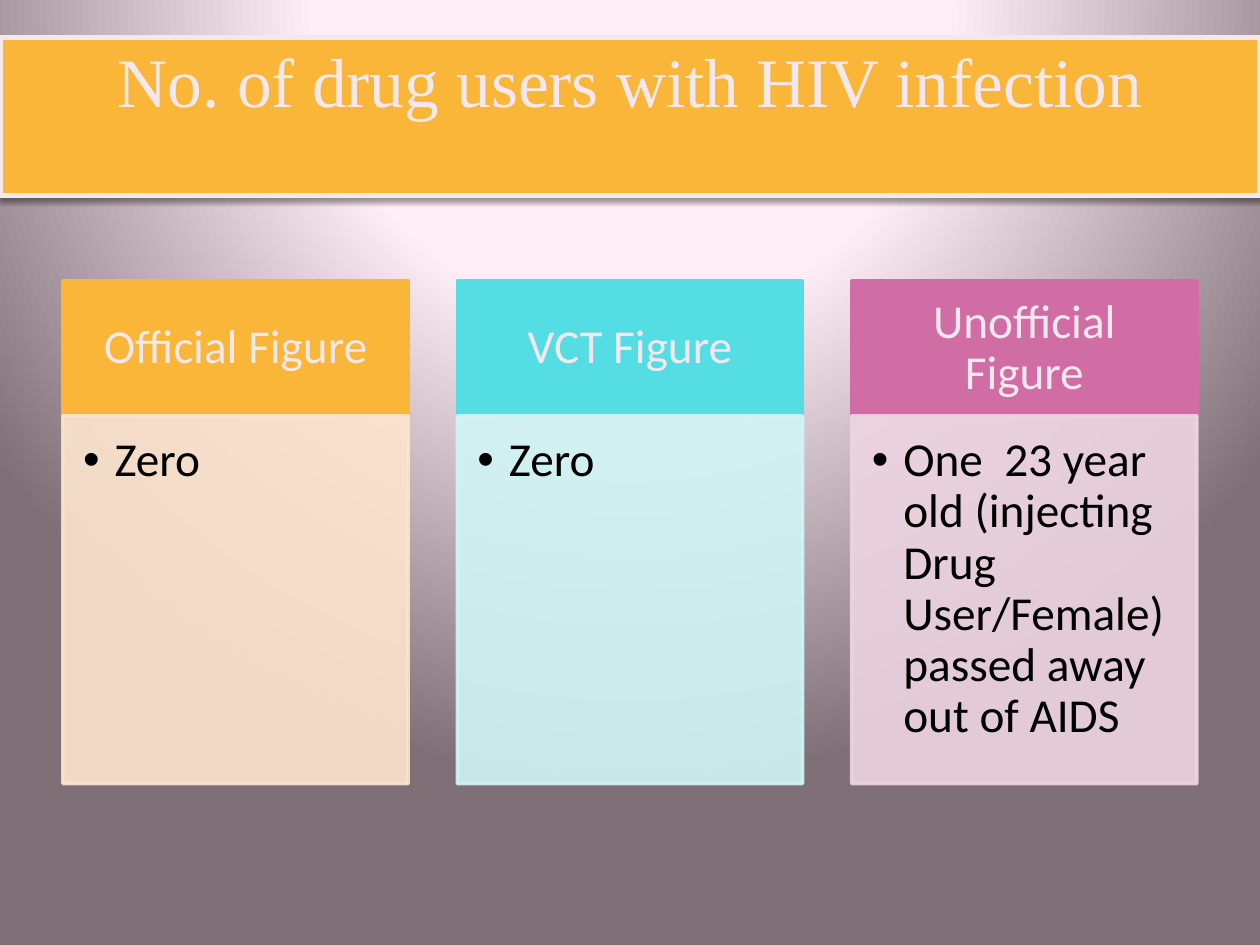
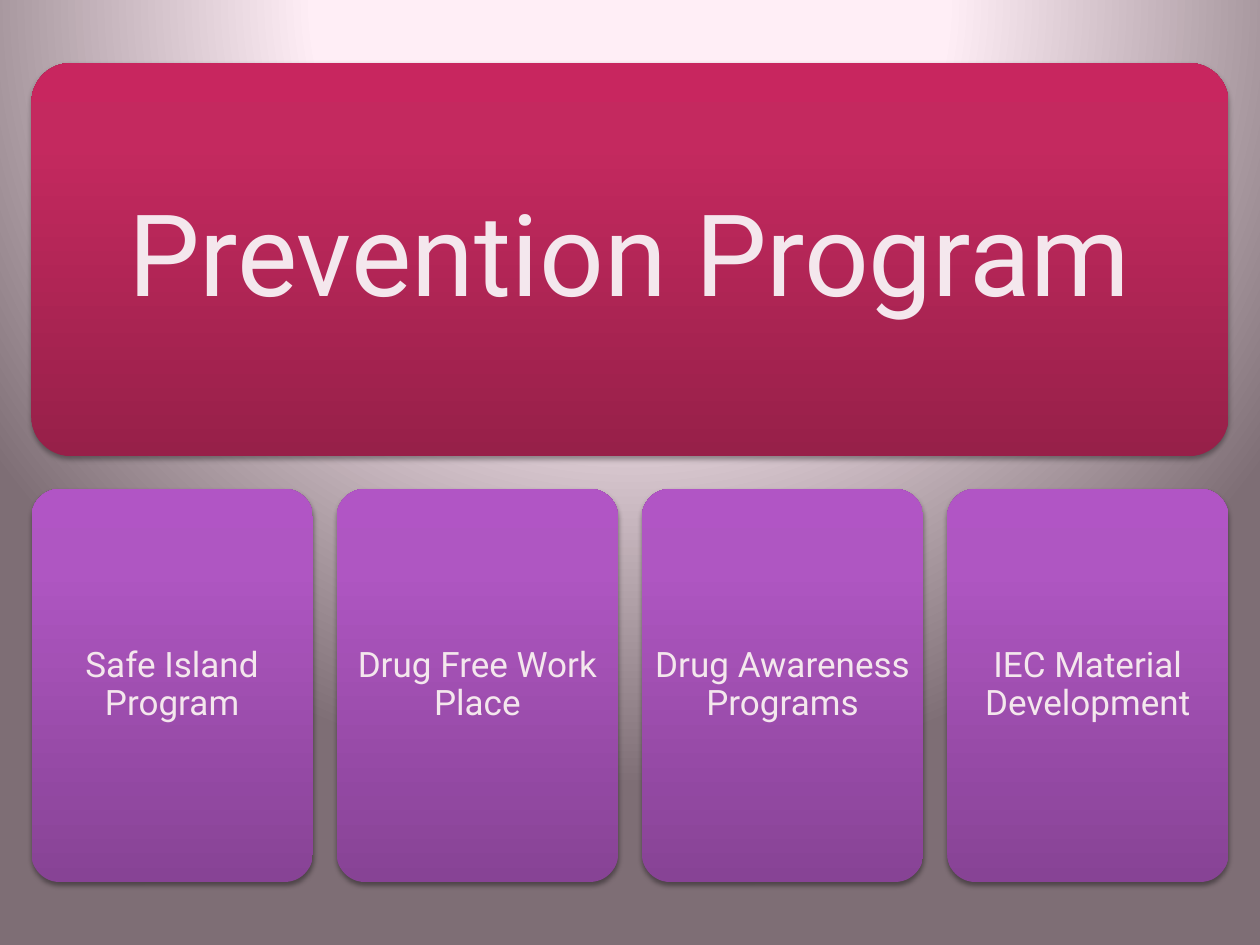
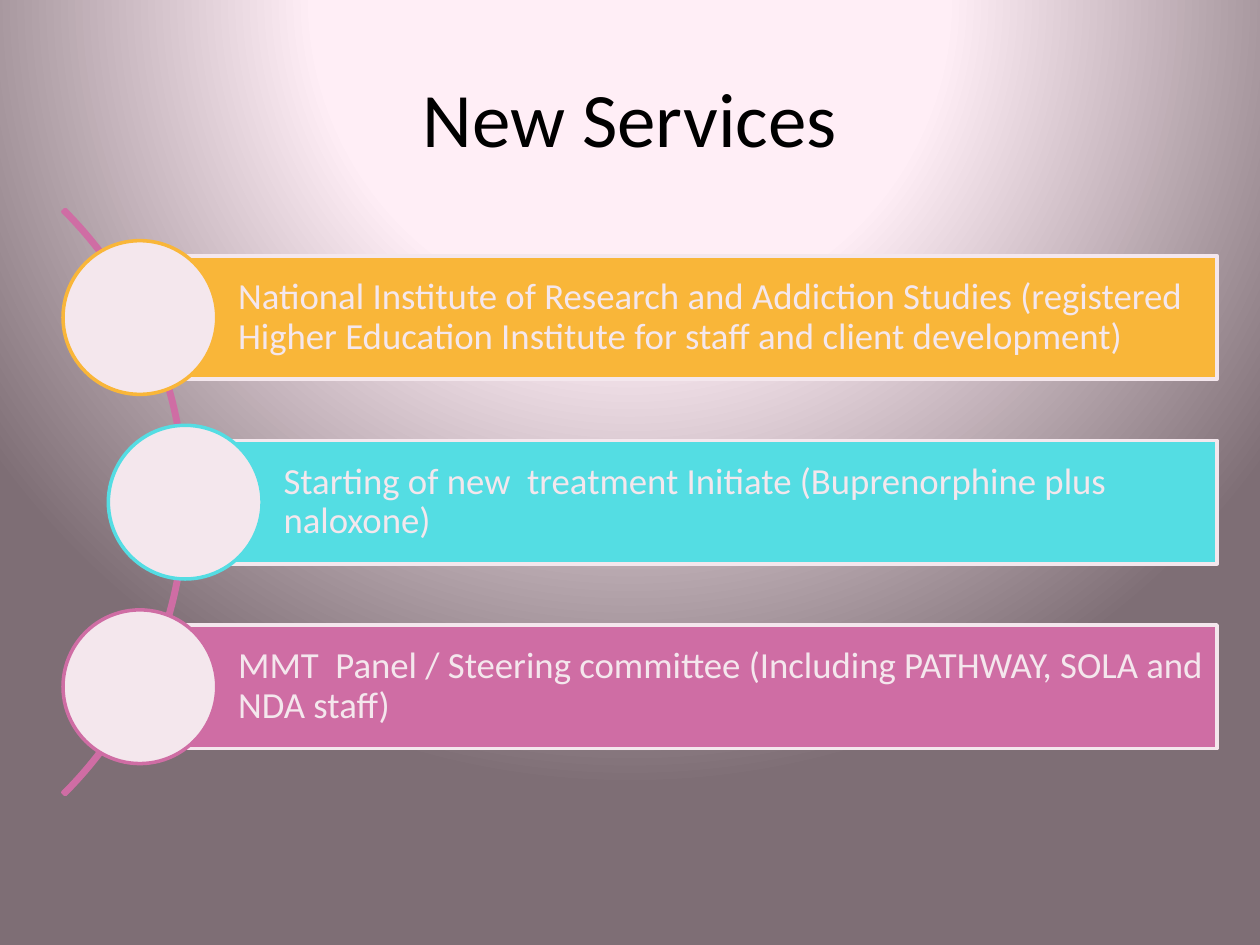
from lxml import etree
from pptx import Presentation
from pptx.dml.color import RGBColor
from pptx.enum.shapes import MSO_SHAPE
from pptx.enum.text import MSO_ANCHOR, PP_ALIGN
from pptx.oxml import parse_xml
from pptx.oxml.ns import nsdecls, qn
from pptx.util import Inches, Pt

RECT, ROUND = MSO_SHAPE.RECTANGLE, MSO_SHAPE.ROUNDED_RECTANGLE
OVAL, ARC = MSO_SHAPE.OVAL, MSO_SHAPE.BLOCK_ARC
TOP, MIDDLE = MSO_ANCHOR.TOP, MSO_ANCHOR.MIDDLE
LEFT, CENTER = PP_ALIGN.LEFT, PP_ALIGN.CENTER

# Palette
BLACK = RGBColor(0x00, 0x00, 0x00)
PALE = RGBColor(0xF4, 0xE7, 0xED)
AMBER = RGBColor(0xF9, 0xB6, 0x39)
CYAN = RGBColor(0x54, 0xDD, 0xE3)
PINK = RGBColor(0xCF, 0x6D, 0xA4)
LIGHT_AMBER = RGBColor(0xFD, 0xE5, 0xCE)
LIGHT_CYAN = RGBColor(0xD1, 0xF5, 0xF6)
LIGHT_PINK = RGBColor(0xED, 0xD5, 0xE1)

# Gradients: (position in percent, colour)
BACKDROP = [(0, RGBColor(0xFF, 0xF1, 0xF8)), (40, RGBColor(0xFF, 0xEE, 0xF6)),
            (100, RGBColor(0x7E, 0x6E, 0x75))]
CRIMSON = [(0, RGBColor(0x97, 0x20, 0x49)), (80, RGBColor(0xC4, 0x29, 0x5F)),
           (100, RGBColor(0xC8, 0x26, 0x5F))]
PURPLE = [(0, RGBColor(0x87, 0x43, 0x95)), (80, RGBColor(0xAF, 0x56, 0xC2)),
          (100, RGBColor(0xB1, 0x55, 0xC5))]
UPWARD = '<a:lin ang="16200000" scaled="0"/>'
FROM_ABOVE = ('<a:path path="circle"><a:fillToRect l="50000" t="-80000" '
              'r="50000" b="180000"/></a:path>')

# Slide size and text formats
WIDTH, HEIGHT = 10, 7.5
TITLE_TOP, TITLE_HEIGHT = 0.04 * HEIGHT, 1.25
BANNER_TITLE = {"name": "Times New Roman", "size": Pt(39.6), "color": PALE}
PLAIN_TITLE = {"name": "Calibri", "size": Pt(44), "color": BLACK}
CARD_HEAD = {"name": "Calibri", "size": Pt(27), "color": PALE}
CARD_BODY = {"name": "Calibri", "size": Pt(27), "color": BLACK}
PROGRAM_HEAD = {"name": "Roboto", "size": Pt(65), "color": PALE}
PROGRAM_ITEM = {"name": "Roboto", "size": Pt(20), "color": PALE}
SERVICE_TEXT = {"name": "Calibri", "size": Pt(21), "color": PALE}

CARDS = [
    ("Official Figure", "Zero", AMBER, LIGHT_AMBER),
    ("VCT Figure", "Zero", CYAN, LIGHT_CYAN),
    ("Unofficial Figure",
     "One  23 year old (injecting Drug User/Female) passed away out of AIDS",
     PINK, LIGHT_PINK),
]
PROGRAMS = ["Safe Island Program", "Drug Free Work Place",
            "Drug Awareness Programs", "IEC Material Development"]
SERVICES = [
    ("National Institute of Research and Addiction Studies (registered "
     "Higher Education Institute for staff and client development)", AMBER, 1.11),
    ("Starting of new  treatment Initiate (Buprenorphine plus naloxone)", CYAN, 1.47),
    ("MMT  Panel / Steering committee (Including PATHWAY, SOLA and NDA staff)",
     PINK, 1.11),
]


def tracks(start, length, count, gap):
    """Split a length into equal tracks; return their starts and their size."""
    size = (length - gap * (count - 1)) / count
    return [start + i * (size + gap) for i in range(count)], size


def gradient(stops, direction):
    gs = "".join(f'<a:gs pos="{pos * 1000}"><a:srgbClr val="{color}"/></a:gs>'
                 for pos, color in stops)
    return parse_xml(f'<a:gradFill {nsdecls("a")} rotWithShape="1">'
                     f'<a:gsLst>{gs}</a:gsLst>{direction}</a:gradFill>')


def set_gradient(fill, parent, stops, direction):
    fill.solid()
    parent.replace(parent.find(qn("a:solidFill")), gradient(stops, direction))


def add_shadow(sp, alpha, distance):
    effects = sp._element.spPr.find(qn("a:effectLst"))
    effects.append(parse_xml(
        f'<a:outerShdw {nsdecls("a")} blurRad="{Pt(3.1)}" dist="{Pt(distance)}" '
        f'dir="5400000" rotWithShape="0"><a:srgbClr val="000000">'
        f'<a:alpha val="{alpha * 1000}"/></a:srgbClr></a:outerShdw>'))


def add_box(s, kind, box, fill=None, line=None, weight=2, opacity=100):
    """Add a shape; fill is a colour, a list of gradient stops or None."""
    sp = s.shapes.add_shape(kind, *(Inches(v) for v in box))
    sp.shadow.inherit = False
    spPr = sp._element.spPr
    if fill is None:
        sp.fill.background()
    elif isinstance(fill, list):
        set_gradient(sp.fill, spPr, fill, UPWARD)
    else:
        sp.fill.solid()
        sp.fill.fore_color.rgb = fill
    if line is None:
        sp.line.fill.background()
    else:
        sp.line.color.rgb = line
        sp.line.width = Pt(weight)
    if opacity < 100:
        for color in spPr.iter(qn("a:srgbClr")):
            etree.SubElement(color, qn("a:alpha"), val=str(opacity * 1000))
    return sp


def write(sp, text, font, insets, align=CENTER, anchor=MIDDLE, spacing=0.9):
    tf = sp.text_frame
    tf.word_wrap = True
    tf.vertical_anchor = anchor
    for side, inset in zip(("left", "top", "right", "bottom"), insets):
        setattr(tf, f"margin_{side}", Inches(inset))
    p = tf.paragraphs[0]
    p.alignment = align
    p.line_spacing = spacing
    r = p.add_run()
    r.text = text
    for key, value in font.items():
        if key == "color":
            r.font.color.rgb = value
        else:
            setattr(r.font, key, value)
    return p


def add_bullet(p, indent):
    pPr = p._p.get_or_add_pPr()
    pPr.set("marL", str(Inches(indent)))
    pPr.set("indent", str(-Inches(indent)))
    etree.SubElement(pPr, qn("a:buFont"), typeface="Arial")
    etree.SubElement(pPr, qn("a:buChar"), char="•")


def add_card(s, left, width, head, body, color, tint):
    top, head_height, body_height = 2.23, 1.07, 2.92
    sp = add_box(s, RECT, (left, top, width, head_height), color, color)
    write(sp, head, CARD_HEAD, (0.21, 0.12, 0.21, 0.12))
    sp = add_box(s, RECT, (left, top + head_height, width, body_height),
                 tint, tint, opacity=90)
    p = write(sp, body, CARD_BODY, (0.16, 0.16, 0.21, 0.24), LEFT, TOP)
    add_bullet(p, 0.25)


def add_tile(s, box, text, font, stops, inset, alpha, distance):
    sp = add_box(s, ROUND, box, stops)
    sp.adjustments[0] = 0.1
    add_shadow(sp, alpha, distance)
    write(sp, text, font, [inset] * 4)


def add_service(s, left, top, height, text, color):
    right, diameter = 9.66, 1.22
    sp = add_box(s, RECT, (left, top, right - left, height), color, PALE)
    write(sp, text, SERVICE_TEXT, (0.78, 0.06, 0.06, 0.06), LEFT)
    add_box(s, OVAL, (left - diameter / 2, top + (height - diameter) / 2,
                      diameter, diameter), PALE, color)


def infection_slide(s):
    banner = add_box(s, RECT, (0, TITLE_TOP, WIDTH, TITLE_HEIGHT), AMBER, PALE, 3)
    add_shadow(banner, 38, 1.6)
    write(banner, "No. of drug users with HIV infection", BANNER_TITLE,
          (0.1, 0, 0.1, 0), anchor=TOP, spacing=1.0)
    lefts, width = tracks(0.5, 0.9 * WIDTH, len(CARDS), 0.39)
    for left, card in zip(lefts, CARDS):
        add_card(s, left, width, *card)


def prevention_slide(s):
    margin = 0.25
    span = WIDTH - 2 * margin
    (upper, lower), height = tracks(0.5, 6.5, 2, 0.26)
    add_tile(s, (margin, upper, span, height), "Prevention Program",
             PROGRAM_HEAD, CRIMSON, 0.18, 35, 1.8)
    lefts, width = tracks(margin, span, len(PROGRAMS), 0.19)
    for left, program in zip(lefts, PROGRAMS):
        add_tile(s, (left, lower, width, height), program,
                 PROGRAM_ITEM, PURPLE, 0.02, 38, 1.6)


def services_slide(s):
    title = s.shapes.add_textbox(Inches(0.5), Inches(TITLE_TOP),
                                 Inches(0.9 * WIDTH), Inches(TITLE_HEIGHT))
    write(title, "New Services", PLAIN_TITLE, (0.1, 0.05, 0.1, 0.05), spacing=1.0)
    # Thin arc from 315 to 45 degrees behind the rows
    arc = add_box(s, ARC, (-5.09, 0.7, 6.57, 6.57), line=PINK)
    for i, value in enumerate((189, 27, 0.004)):
        arc.adjustments[i] = value
    tops, height = tracks(2.03, 3.91, len(SERVICES), 0.485)
    for top, (text, color, left) in zip(tops, SERVICES):
        add_service(s, left, top, height, text, color)


def main():
    prs = Presentation()
    prs.slide_width, prs.slide_height = Inches(WIDTH), Inches(HEIGHT)
    # Shared background on the master
    master = prs.slide_master
    fill = master.background.fill
    fill.solid()
    set_gradient(fill, master.element.find(".//" + qn("p:bgPr")), BACKDROP, FROM_ABOVE)
    for build in (infection_slide, prevention_slide, services_slide):
        build(prs.slides.add_slide(prs.slide_layouts[6]))
    prs.save("out.pptx")


if __name__ == "__main__":
    main()
